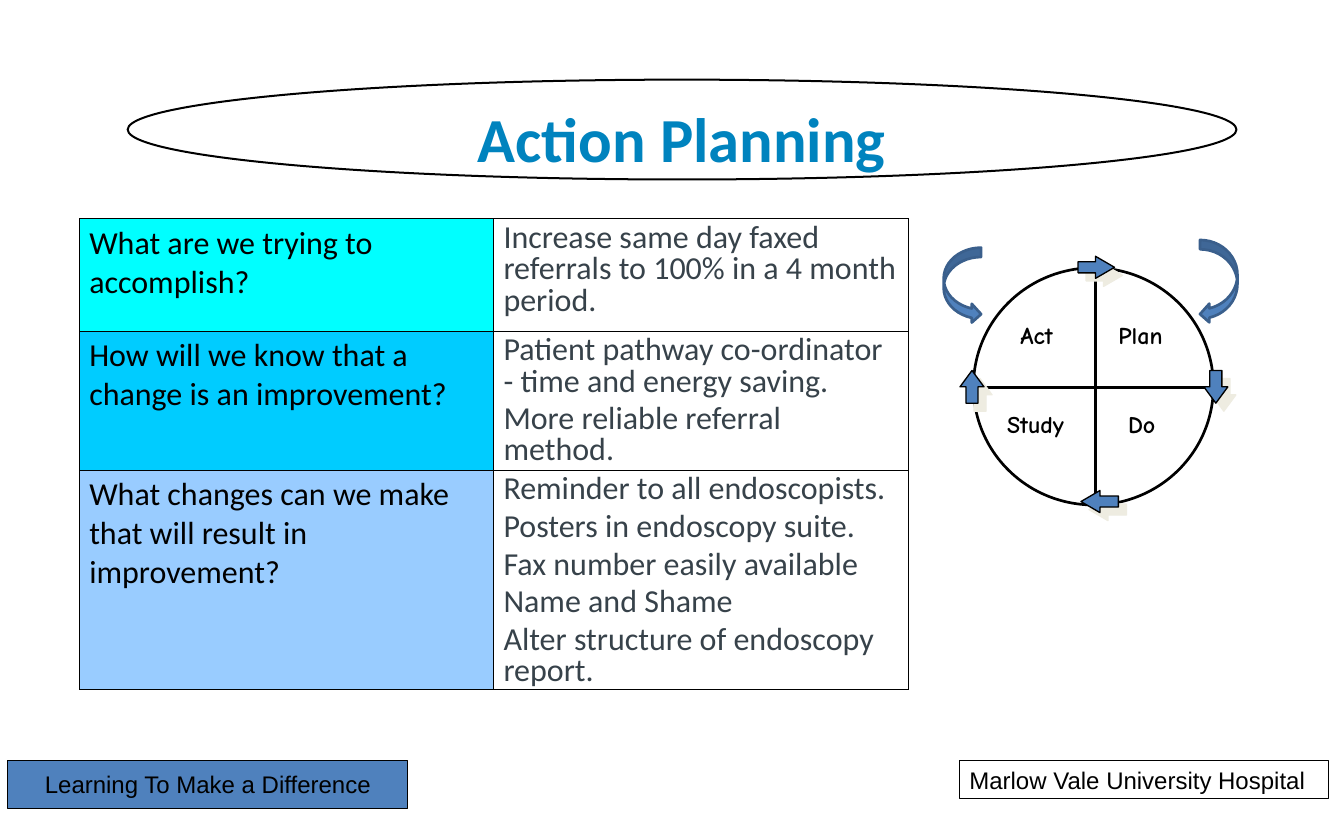
from lxml import etree
from pptx import Presentation
from pptx.dml.color import RGBColor
from pptx.enum.shapes import MSO_CONNECTOR, MSO_SHAPE
from pptx.enum.text import MSO_ANCHOR, MSO_AUTO_SIZE, PP_ALIGN
from pptx.oxml import parse_xml
from pptx.oxml.ns import nsdecls, qn
from pptx.util import Inches, Pt

OVAL, RECTANGLE = MSO_SHAPE.OVAL, MSO_SHAPE.RECTANGLE
RIGHT, LEFT = MSO_SHAPE.RIGHT_ARROW, MSO_SHAPE.LEFT_ARROW
UP, DOWN = MSO_SHAPE.UP_ARROW, MSO_SHAPE.DOWN_ARROW
CURVED_RIGHT, CURVED_LEFT = MSO_SHAPE.CURVED_RIGHT_ARROW, MSO_SHAPE.CURVED_LEFT_ARROW
STRAIGHT = MSO_CONNECTOR.STRAIGHT
TOP, MIDDLE = MSO_ANCHOR.TOP, MSO_ANCHOR.MIDDLE
ALIGN_LEFT, ALIGN_CENTER = PP_ALIGN.LEFT, PP_ALIGN.CENTER
FIT_SHAPE, NO_FIT = MSO_AUTO_SIZE.SHAPE_TO_FIT_TEXT, MSO_AUTO_SIZE.NONE

BLACK, WHITE = RGBColor(0, 0, 0), RGBColor(255, 255, 255)
TITLE_BLUE = RGBColor(0x00, 0x83, 0xBE)
BLUE, DARK_BLUE = RGBColor(0x4F, 0x81, 0xBD), RGBColor(0x3A, 0x5F, 0x8C)
SLATE, SHADOW = RGBColor(0x37, 0x42, 0x4A), RGBColor(0xEE, 0xEC, 0xE1)
CYAN, SKY, PALE = RGBColor(0, 255, 255), RGBColor(0, 0xCC, 255), RGBColor(0x99, 0xCC, 255)

COLUMNS, ROWS = 140, 85
UNIT = Inches(0.1)

PLAN = [
    (CYAN, 11.7, ["What are we trying to", "accomplish?"],
     ["Increase same day faxed referrals to 100% in a 4 month period."]),
    (SKY, 10.8, ["How will we know that a", "change is an improvement?"],
     ["Patient pathway co-ordinator - time and energy saving.",
      "More reliable referral method."]),
    (PALE, 14.4, ["What changes can we make", "that will result in", "improvement?"],
     ["Reminder to all endoscopists.", "Posters in endoscopy suite.",
      "Fax number easily available", "Name and Shame",
      "Alter structure of endoscopy report."]),
]
STAGES = [("Act", 7.3, 8.1, 5.7), ("Plan", 17.5, 8.1, 6.1),
          ("Study", 5.9, 17.4, 8.5), ("Do", 18.5, 17.4, 4.5)]
CROSS = [(15.8, 2.8, 15.8, 27.6), (2.9, 15.4, 29.2, 15.4)]
ARROWS = [(RIGHT, 14, 1.7, 3.8, 2.3, 0.86), (LEFT, 14.3, 26.1, 3.9, 2.3, 0.86),
          (DOWN, 27.1, 13.6, 2.5, 3.4, 0.68), (UP, 1.7, 13.6, 2.5, 3.4, 0.68)]
CURVES = [(CURVED_RIGHT, 0, 0.8, 3.9, 7.9), (CURVED_LEFT, 26.7, 0, 3.9, 8.7)]


def grid(*cells):
    """Turn grid cells into slide lengths."""
    return [int(cell * UNIT) for cell in cells]


def set_attributes(target, values):
    """Set every attribute named in a dict."""
    for name, value in values.items():
        setattr(target, name, value)


def write(frame, lines, font, paragraph_format=None):
    """Write one formatted paragraph for each line."""
    for index, line in enumerate(lines):
        paragraph = frame.add_paragraph() if index else frame.paragraphs[0]
        set_attributes(paragraph, paragraph_format or {})
        run = paragraph.add_run()
        run.text = line
        color = font["color"]
        set_attributes(run.font, {name: value for name, value in font.items() if name != "color"})
        run.font.color.rgb = color


def add_figure(shapes, kind, box, fill, line, width):
    """Add a flat preset shape in a grid box."""
    shape = shapes.add_shape(kind, *grid(*box))
    shape.shadow.inherit = False
    shape.fill.solid()
    shape.fill.fore_color.rgb = fill
    shape.line.color.rgb = line
    shape.line.width = Pt(width)
    return shape


def add_rule(shapes, ends):
    """Add a straight black line without a shadow."""
    rule = shapes.add_connector(STRAIGHT, *grid(*ends))
    rule.line.color.rgb = BLACK
    rule.line.width = Pt(2)
    etree.SubElement(rule._element.spPr, qn("a:effectLst"))


def add_hard_shadow(shape):
    """Cast a sharp diagonal shadow."""
    effects = shape._element.spPr.find(qn("a:effectLst"))
    effects.append(parse_xml(
        f'<a:outerShdw {nsdecls("a")} blurRad="0" dist="{Pt(8.5)}" dir="2700000" '
        f'algn="ctr" rotWithShape="0"><a:srgbClr val="{SHADOW}"/></a:outerShdw>'))


def add_borders(cell):
    """Draw a thin black border on every side of a cell."""
    properties = cell._tc.get_or_add_tcPr()
    for index, side in enumerate(("lnL", "lnR", "lnT", "lnB")):
        properties.insert(index, parse_xml(
            f'<a:{side} {nsdecls("a")} w="{Pt(1)}"><a:solidFill>'
            f'<a:srgbClr val="{BLACK}"/></a:solidFill></a:{side}>'))


def add_title(slide, box):
    """Place the title in a wide oval."""
    oval = add_figure(slide.shapes, OVAL, box, WHITE, BLACK, 1.5)
    side, edge = Inches(0.13), Inches(0.06)
    set_attributes(oval.text_frame, {
        "margin_left": side, "margin_right": side, "margin_top": edge,
        "margin_bottom": edge, "word_wrap": True, "vertical_anchor": TOP})
    write(oval.text_frame, ["Action Planning"],
          {"name": "Calibri", "size": Pt(47), "bold": True, "color": TITLE_BLUE},
          {"alignment": ALIGN_CENTER, "space_before": Pt(14.1)})


def add_plan_table(slide, box):
    """Place the table of questions and answers."""
    frame = slide.shapes.add_table(len(PLAN), 2, *grid(*box))
    table = frame.table
    set_attributes(table, {"first_row": False, "horz_banding": False})
    for column in table.columns:
        column.width = int(box[2] * UNIT / 2)
    answer_format = {"line_spacing": 0.8, "space_before": Pt(4.8)}
    for index, (fill, height, question, answer) in enumerate(PLAN):
        table.rows[index].height = int(height * UNIT)
        parts = [(question, fill, BLACK, {}), (answer, WHITE, SLATE, answer_format)]
        for column, (lines, shade, color, paragraph_format) in enumerate(parts):
            cell = table.cell(index, column)
            cell.fill.solid()
            cell.fill.fore_color.rgb = shade
            add_borders(cell)
            write(cell.text_frame, lines,
                  {"name": "Calibri", "size": Pt(24), "color": color}, paragraph_format)
    frame.height = int(box[3] * UNIT)


def add_cycle(slide, left, top):
    """Place the improvement cycle with its arrows."""
    group = slide.shapes.add_group_shape().shapes
    add_figure(group, OVAL, (left + 3.1, top + 2.9, 25, 24.7), WHITE, BLACK, 2)
    for x1, y1, x2, y2 in CROSS:
        add_rule(group, (left + x1, top + y1, left + x2, top + y2))
    side, edge = Inches(0.07), Inches(0.03)
    for name, x, y, width in STAGES:
        frame = group.add_textbox(*grid(left + x, top + y, width, 3.7)).text_frame
        set_attributes(frame, {
            "margin_left": side, "margin_right": side, "margin_top": edge,
            "margin_bottom": edge, "word_wrap": False, "auto_size": FIT_SHAPE})
        write(frame, [name],
              {"name": "Comic Neue", "size": Pt(18), "bold": True, "color": BLACK})
    for kind, x, y, width, height, head in ARROWS:
        arrow = add_figure(group, kind, (left + x, top + y, width, height), BLUE, BLACK, 1)
        arrow.adjustments[1] = head
        add_hard_shadow(arrow)
    for kind, x, y, width, height in CURVES:
        add_figure(slide.shapes, kind, (left + x, top + y, width, height), BLUE, DARK_BLUE, 2)


def add_footer_label(slide, box, text, fill, alignment, frame_format):
    """Place one framed label at the foot of the slide."""
    label = add_figure(slide.shapes, RECTANGLE, box, fill, BLACK, 0.75)
    set_attributes(label.text_frame, {"word_wrap": False, **frame_format})
    write(label.text_frame, [text], {"name": "Arial", "size": Pt(18), "color": BLACK},
          {"alignment": alignment})


def main():
    """Build the slide and save it."""
    presentation = Presentation()
    presentation.slide_width, presentation.slide_height = grid(COLUMNS, ROWS)
    slide = presentation.slides.add_slide(presentation.slide_layouts[6])
    add_title(slide, (13.3, 8.3, 115.5, 10.4))
    add_cycle(slide, 98.3, 25)
    add_plan_table(slide, (8.3, 22.8, 86.3, 49.7))
    add_footer_label(slide, (100, 79.2, 38.4, 4), "Marlow Vale University Hospital",
                     WHITE, ALIGN_LEFT, {"vertical_anchor": TOP, "auto_size": FIT_SHAPE})
    add_footer_label(slide, (0.8, 79.2, 41.7, 5), "Learning To Make a Difference",
                     BLUE, ALIGN_CENTER, {"vertical_anchor": MIDDLE, "auto_size": NO_FIT})
    presentation.save("out.pptx")


if __name__ == "__main__":
    main()
